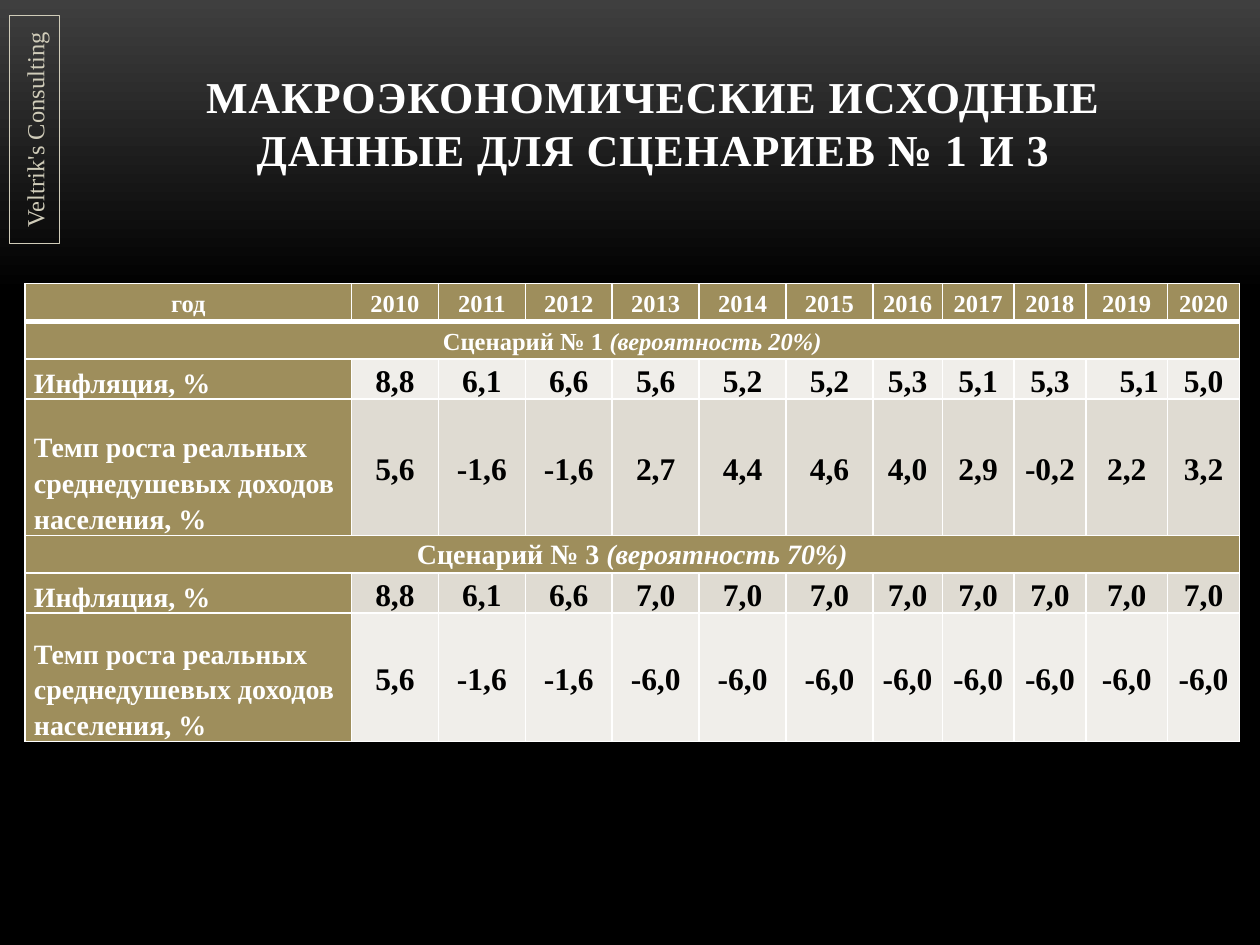
from dataclasses import dataclass

from lxml import etree
from pptx import Presentation
from pptx.dml.color import RGBColor
from pptx.enum.shapes import MSO_SHAPE
from pptx.enum.text import MSO_ANCHOR, PP_ALIGN
from pptx.oxml.ns import qn
from pptx.util import Inches, Pt

LEFT, CENTER, RIGHT = PP_ALIGN.LEFT, PP_ALIGN.CENTER, PP_ALIGN.RIGHT
TOP, MIDDLE, BOTTOM = MSO_ANCHOR.TOP, MSO_ANCHOR.MIDDLE, MSO_ANCHOR.BOTTOM
RECTANGLE = MSO_SHAPE.RECTANGLE


@dataclass(frozen=True)
class Theme:
    font: str = "Times New Roman"
    white: str = "FFFFFF"
    black: str = "000000"
    gray: str = "3F3F3F"
    gold: str = "9E8E5C"
    sand: str = "D0CCB9"
    light: str = "F0EEEA"
    dark: str = "DFDBD2"
    title_size: float = 25.2
    small_size: float = 14
    label_size: float = 16
    value_size: float = 18


@dataclass(frozen=True)
class Banner:
    """A row merged across the whole table."""
    name: str
    chance: str
    size: float
    anchor: MSO_ANCHOR


@dataclass(frozen=True)
class Series:
    """A labelled row of yearly values."""
    label: str
    values: str
    fill: str
    anchor: MSO_ANCHOR
    right_columns: tuple = ()


THEME = Theme()
INFLATION = "Инфляция, %"
INCOME = "Темп роста реальных среднедушевых доходов населения, %"
YEARS = range(2010, 2021)
COLUMN_WIDTHS = [2.59] + [0.69] * 6 + [0.55, 0.57, 0.57, 0.65, 0.57]
ROW_HEIGHTS = [0.3, 0.3, 0.3, 1.08, 0.3, 0.3, 1.02]
ROWS = [
    Banner("Сценарий № 1 ", "(вероятность 20%)", THEME.small_size, MIDDLE),
    Series(INFLATION, "8,8 6,1 6,6 5,6 5,2 5,2 5,3 5,1 5,3 5,1 5,0",
           THEME.light, BOTTOM, right_columns=(10,)),
    Series(INCOME, "5,6 -1,6 -1,6 2,7 4,4 4,6 4,0 2,9 -0,2 2,2 3,2",
           THEME.dark, MIDDLE),
    Banner("Сценарий № 3 ", "(вероятность 70%)", THEME.label_size, TOP),
    Series(INFLATION, "8,8 6,1 6,6" + " 7,0" * 8, THEME.dark, MIDDLE),
    Series(INCOME, "5,6 -1,6 -1,6" + " -6,0" * 8, THEME.light, MIDDLE),
]


def color(value: str) -> RGBColor:
    return RGBColor.from_string(value)


def style_paragraph(para, size: float, fill: str, align: PP_ALIGN, bold: bool = True) -> None:
    para.alignment = align
    para.font.name = THEME.font
    para.font.size = Pt(size)
    para.font.bold = bold
    para.font.color.rgb = color(fill)


def write_cell(cell, text: str, size: float, fill: str, ink: str = THEME.white,
               align: PP_ALIGN = CENTER, anchor: MSO_ANCHOR = MIDDLE):
    cell.fill.solid()
    cell.fill.fore_color.rgb = color(fill)
    cell.vertical_anchor = anchor
    cell.margin_left = cell.margin_right = Inches(0.07)
    cell.margin_top = cell.margin_bottom = 0
    para = cell.text_frame.paragraphs[0]
    para.add_run().text = text
    para.line_spacing = 1.15
    style_paragraph(para, size, ink, align)
    return para


def add_borders(cell, row: int) -> None:
    """White grid, with a heavier rule under the header row."""
    widths = {"a:lnL": 1, "a:lnR": 1, "a:lnT": 3 if row == 1 else 1,
              "a:lnB": 3 if row == 0 else 1}
    properties = cell._tc.get_or_add_tcPr()
    for tag, width in widths.items():
        line = etree.SubElement(properties, qn(tag), w=str(Pt(width)))
        solid = etree.SubElement(line, qn("a:solidFill"))
        etree.SubElement(solid, qn("a:srgbClr"), val=THEME.white)


def paint_background(page) -> None:
    fill = page.background.fill
    fill.gradient()
    fill.gradient_angle = 270
    for stop, position, shade in zip(fill.gradient_stops, (0, 0.31), (THEME.gray, THEME.black)):
        stop.position = position
        stop.color.rgb = color(shade)


def add_title(page, text: str) -> None:
    title = page.shapes.title
    title.left, title.top = Inches(1.06), Inches(0.44)
    title.width, title.height = Inches(8.25), Inches(1)
    title.text_frame.vertical_anchor = BOTTOM
    para = title.text_frame.paragraphs[0]
    span = para.add_run()
    span.text = text
    style_paragraph(para, THEME.title_size, THEME.white, CENTER)
    span._r.get_or_add_rPr().set("spc", "50")


def add_scenario_table(page) -> None:
    frame = page.shapes.add_table(len(ROW_HEIGHTS), len(COLUMN_WIDTHS), Inches(0.2),
                                  Inches(2.25), Inches(9.65), Inches(3.7))
    table = frame.table
    for column, width in zip(table.columns, COLUMN_WIDTHS):
        column.width = Inches(width)
    for index, (row, height) in enumerate(zip(table.rows, ROW_HEIGHTS)):
        row.height = Inches(height)
        for cell in row.cells:
            add_borders(cell, index)

    # Header
    for column, text in enumerate(["год", *map(str, YEARS)]):
        write_cell(table.cell(0, column), text, THEME.small_size, THEME.gold)

    # Scenarios
    for row, entry in enumerate(ROWS, start=1):
        first = table.cell(row, 0)
        if isinstance(entry, Banner):
            first.merge(table.cell(row, len(COLUMN_WIDTHS) - 1))
            para = write_cell(first, entry.name, entry.size, THEME.gold, anchor=entry.anchor)
            span = para.add_run()
            span.text = entry.chance
            span.font.italic = True
            continue
        write_cell(first, entry.label, THEME.label_size, THEME.gold, align=LEFT, anchor=BOTTOM)
        for column, value in enumerate(entry.values.split(), start=1):
            align = RIGHT if column in entry.right_columns else CENTER
            write_cell(table.cell(row, column), value, THEME.value_size, entry.fill,
                       THEME.black, align, entry.anchor)


def add_side_label(page, text: str) -> None:
    box = page.shapes.add_shape(RECTANGLE, Inches(-0.63), Inches(0.83),
                                Inches(1.81), Inches(0.4))
    box.rotation = 270
    box.shadow.inherit = False
    box.fill.background()
    box.line.color.rgb = color(THEME.sand)
    box.line.width = Pt(0.75)
    frame = box.text_frame
    frame.word_wrap = False
    frame.margin_left = frame.margin_right = Inches(0.05)
    frame.vertical_anchor = MIDDLE
    para = frame.paragraphs[0]
    para.add_run().text = text
    style_paragraph(para, THEME.small_size, THEME.sand, CENTER, bold=False)


def main() -> None:
    deck = Presentation()
    deck.slide_width, deck.slide_height = Inches(10), Inches(7.5)
    page = deck.slides.add_slide(deck.slide_layouts[5])
    paint_background(page)
    add_title(page, "МАКРОЭКОНОМИЧЕСКИЕ ИСХОДНЫЕ ДАННЫЕ ДЛЯ СЦЕНАРИЕВ № 1 И 3")
    add_scenario_table(page)
    add_side_label(page, "Veltrik's Consulting")
    deck.save("out.pptx")


if __name__ == "__main__":
    main()
